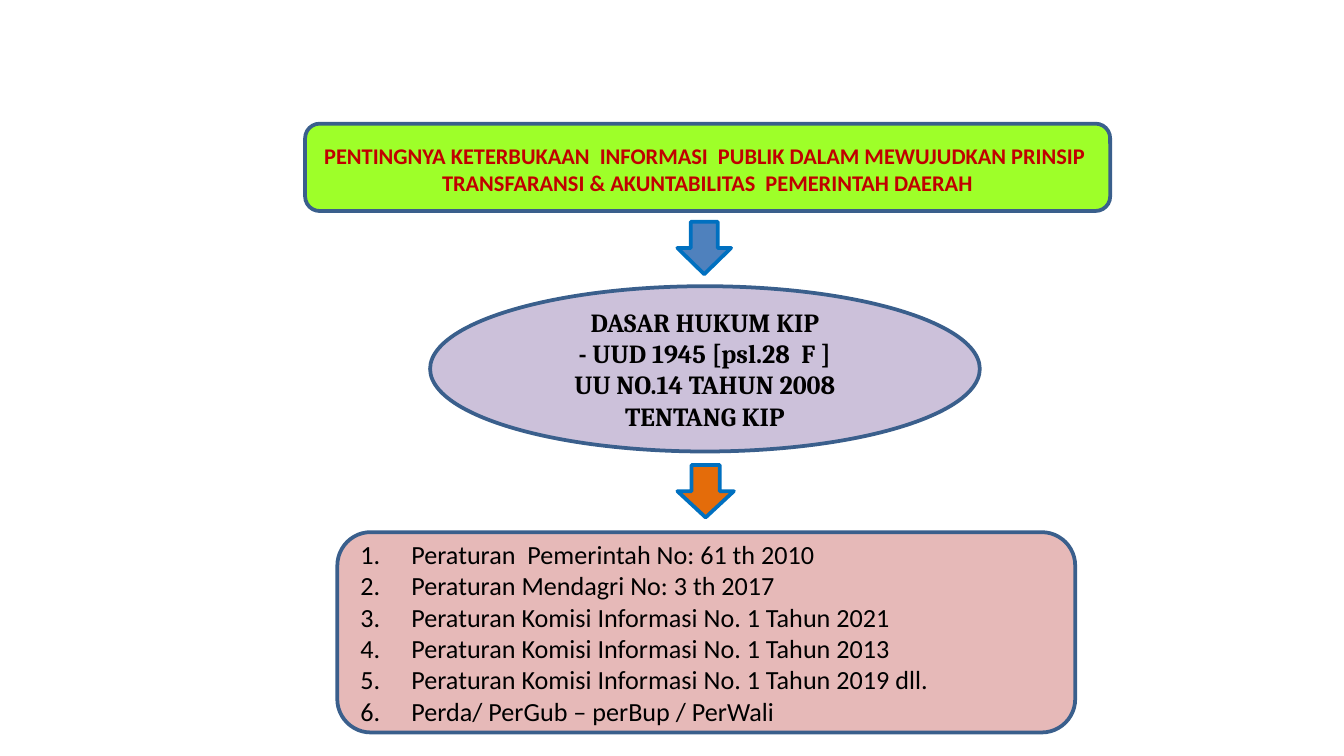
from lxml import etree
from pptx import Presentation
from pptx.dml.color import RGBColor
from pptx.enum import shapes, text
from pptx.oxml.ns import qn
from pptx.util import Inches, Pt

KIND = shapes.MSO_SHAPE
ALIGN = text.PP_ALIGN
EDGE = "3A5F8C"

TITLE = [
    "PENTINGNYA KETERBUKAAN  INFORMASI  PUBLIK DALAM MEWUJUDKAN PRINSIP  "
    "TRANSFARANSI & AKUNTABILITAS  PEMERINTAH DAERAH"
]
BASIS = [
    "DASAR HUKUM KIP",
    "- UUD 1945 [psl.28  F ]",
    "UU NO.14 TAHUN 2008",
    "TENTANG KIP",
]
RULES = [
    "Peraturan  Pemerintah No: 61 th 2010",
    "Peraturan Mendagri No: 3 th 2017",
    "Peraturan Komisi Informasi No. 1 Tahun 2021",
    "Peraturan Komisi Informasi No. 1 Tahun 2013",
    "Peraturan Komisi Informasi No. 1 Tahun 2019 dll.",
    "Perda/ PerGub – perBup / PerWali",
]


def color(code):
    return RGBColor.from_string(code)


def add_form(slide, kind, box, fill, line=EDGE):
    form = slide.shapes.add_shape(kind, *map(Inches, box))
    form.shadow.inherit = False
    form.fill.solid()
    form.fill.fore_color.rgb = color(fill)
    form.line.color.rgb = color(line)
    form.line.width = Pt(2)
    return form


def add_arrow(slide, box, fill):
    add_form(slide, KIND.DOWN_ARROW, box, fill, "0070C0")


def number(para):
    props = para._p.get_or_add_pPr()
    props.set("marL", str(Inches(0.38)))
    props.set("indent", str(Inches(-0.38)))
    etree.SubElement(props, qn("a:buAutoNum"), type="arabicPeriod")


def write(form, lines, face, size, ink="000000", bold=False,
          align=ALIGN.CENTER, listed=False):
    frame = form.text_frame
    frame.word_wrap = True
    frame.vertical_anchor = text.MSO_ANCHOR.MIDDLE
    frame.text = "\n".join(lines)
    for para in frame.paragraphs:
        para.alignment = align
        if listed:
            number(para)
        font = para.font
        font.name = face
        font.size = Pt(size)
        font.bold = bold
        font.color.rgb = color(ink)


def main():
    deck = Presentation()
    deck.slide_width = Inches(10)
    deck.slide_height = deck.slide_width * 9 // 16
    slide = deck.slides.add_slide(deck.slide_layouts[6])

    title = add_form(slide, KIND.ROUNDED_RECTANGLE,
                     (2.27, 0.92, 5.99, 0.65), "9EFF29")
    write(title, TITLE, "Calibri", 12, "C00000", bold=True)
    title.text_frame.margin_top = Inches(0.08)
    add_arrow(slide, (5.04, 1.65, 0.4, 0.39), "4F81BD")

    basis = add_form(slide, KIND.OVAL, (3.2, 2.13, 4.09, 1.23), "CCC1DA")
    write(basis, BASIS, "Cambria", 14, bold=True)
    add_arrow(slide, (5.04, 3.46, 0.42, 0.39), "E46C0A")

    rules = add_form(slide, KIND.ROUNDED_RECTANGLE,
                     (2.51, 3.96, 5.49, 1.49), "E6B9B8")
    write(rules, RULES, "Calibri", 14, align=ALIGN.JUSTIFY, listed=True)

    deck.save("out.pptx")


if __name__ == "__main__":
    main()
